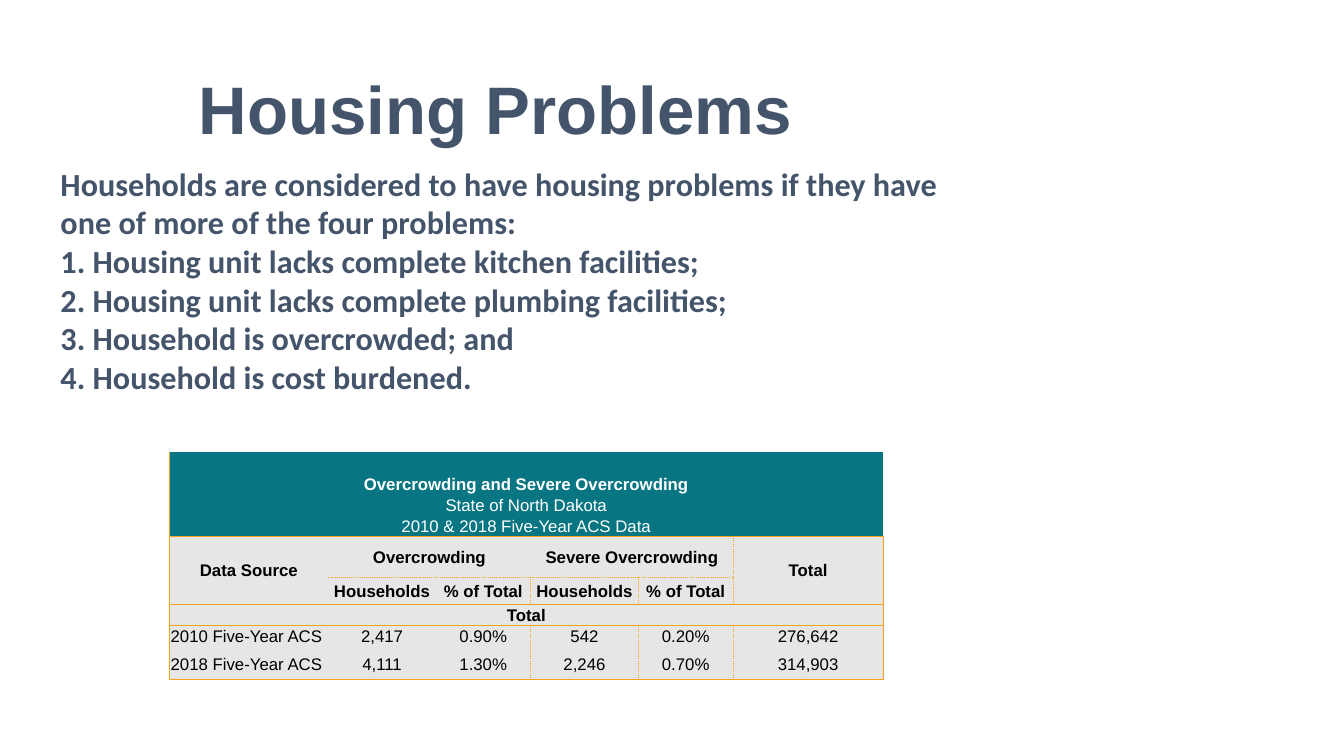
"""Build the Housing Problems slide with its overcrowding table."""
from lxml.etree import SubElement
from pptx import Presentation
from pptx.dml.color import RGBColor as RGB
from pptx.enum.text import MSO_ANCHOR as ANCHOR, MSO_AUTO_SIZE as AUTOSIZE, PP_ALIGN as ALIGN
from pptx.oxml.ns import qn
from pptx.util import Cm, Pt

SLATE, TEAL, GREY, ORANGE = "44546A", "087582", "E7E6E6", "FAA21A"
SOLID, DOTTED = (1, "solid"), (0.5, "sysDot")


def apply_format(part, values):
    for key, value in values.items():
        setattr(part, key, value)


def paint(color_format, color):
    color_format.rgb = RGB.from_string(color)


deck = Presentation()
apply_format(deck, {"slide_width": Cm(33.86), "slide_height": Cm(19.05)})
slide = deck.slides.add_slide(deck.slide_layouts[1])
heading, definition = slide.placeholders

apply_format(heading, {"left": Cm(0.71), "top": Cm(1.5), "width": Cm(23.55), "height": Cm(2.4)})
apply_format(heading.text_frame, {"text": "Housing Problems", "auto_size": AUTOSIZE.NONE,
                                  "vertical_anchor": ANCHOR.MIDDLE})
heading_line = heading.text_frame.paragraphs[0]
heading_line.alignment = ALIGN.CENTER
apply_format(heading_line.font, {"name": "Arial", "size": Pt(48), "bold": True})
paint(heading_line.font.color, SLATE)

problems = [
    "Households are considered to have housing problems if they have one of more of the four problems:",
    "1. Housing unit lacks complete kitchen facilities;",
    "2. Housing unit lacks complete plumbing facilities;",
    "3. Household is overcrowded; and",
    "4. Household is cost burdened.",
]
apply_format(definition, {"left": Cm(1.27), "top": Cm(4.01), "width": Cm(22.76), "height": Cm(6.15)})
apply_format(definition.text_frame, {"text": "\n".join(problems), "auto_size": AUTOSIZE.NONE,
                                     "vertical_anchor": ANCHOR.TOP})
for problem in definition.text_frame.paragraphs:
    properties = problem._p.get_or_add_pPr()
    properties.set("marL", "0")
    properties.set("indent", "0")
    SubElement(properties, qn("a:buNone"))
    apply_format(problem, {"space_before": Pt(0), "alignment": ALIGN.LEFT})
    apply_format(problem.font, {"name": "Calibri", "size": Pt(23), "bold": True})
    paint(problem.font.color, SLATE)

rows = [
    [""],
    ["Overcrowding and Severe Overcrowding"],
    ["State of North Dakota"],
    ["2010 & 2018 Five-Year ACS Data"],
    ["Data Source", "Overcrowding", "", "Severe Overcrowding", "", "Total"],
    ["", "Households", "% of Total", "Households", "% of Total", ""],
    ["Total"],
    ["2010 Five-Year ACS", "2,417", "0.90%", "542", "0.20%", "276,642"],
    ["2018 Five-Year ACS", "4,111", "1.30%", "2,246", "0.70%", "314,903"],
]
row_heights = [0.53, 0.53, 0.53, 0.53, 1.02, 0.69, 0.53, 0.56, 0.81]
column_widths = [4, 2.71, 2.39, 2.71, 2.39, 3.78]
bold_rows = {1, 4, 5, 6}

overcrowding = slide.shapes.add_table(len(rows), len(column_widths), Cm(4.27), Cm(11.4),
                                      Cm(sum(column_widths)), Cm(sum(row_heights))).table
apply_format(overcrowding, {"first_row": False, "horz_banding": False})
overcrowding._tbl.tblPr.find(qn("a:tableStyleId")).text = "{2D5ABB26-0587-4C30-8999-92F81FD0307C}"
for row, height in zip(overcrowding.rows, row_heights):
    row.height = Cm(height)
for column, width in zip(overcrowding.columns, column_widths):
    column.width = Cm(width)

for index, texts in enumerate(rows):
    if len(texts) == 1:
        overcrowding.cell(index, 0).merge(overcrowding.cell(index, 5))
for start, end in [((4, 0), (5, 0)), ((4, 1), (4, 2)), ((4, 3), (4, 4)), ((4, 5), (5, 5))]:
    overcrowding.cell(*start).merge(overcrowding.cell(*end))

row_rules = {(row, col): SOLID for row in (3, 5, 8) for col in range(6)}
row_rules.update({(4, col): DOTTED for col in range(1, 5)})
column_rules = {(row, -1): SOLID for row in range(9)}
column_rules.update({(row, 5): SOLID for row in range(4, 9)})
column_rules.update({(row, col): DOTTED for row in (5, 7, 8) for col in (2, 4)})
column_rules[4, 4] = DOTTED

for row, texts in enumerate(rows):
    for col, text in enumerate(texts):
        cell = overcrowding.cell(row, col)
        if cell.is_spanned:
            continue
        last_row, last_col = row, col
        if cell.is_merge_origin:
            last_row += cell.span_height - 1
            last_col += cell.span_width - 1
        apply_format(cell, {"text": text, "vertical_anchor": ANCHOR.MIDDLE, "margin_left": Cm(0.03),
                            "margin_right": Cm(0.03), "margin_top": Cm(0.03), "margin_bottom": 0})
        edges = {"a:lnL": column_rules.get((row, col - 1)), "a:lnR": column_rules.get((row, last_col)),
                 "a:lnT": row_rules.get((row - 1, col)), "a:lnB": row_rules.get((last_row, col))}
        for tag, rule in edges.items():
            if rule:
                weight, dash = rule
                border = SubElement(cell._tc.get_or_add_tcPr(), qn(tag), w=str(Pt(weight)))
                SubElement(SubElement(border, qn("a:solidFill")), qn("a:srgbClr"), val=ORANGE)
                SubElement(border, qn("a:prstDash"), val=dash)
        cell.fill.solid()
        paint(cell.fill.fore_color, TEAL if row < 4 else GREY)
        label = cell.text_frame.paragraphs[0]
        label.alignment = ALIGN.LEFT if row > 6 and col == 0 else ALIGN.CENTER
        apply_format(label.font, {"name": "Arial", "size": Pt(12), "bold": row in bold_rows})
        paint(label.font.color, "FFFFFF" if row < 4 else "000000")
        if not text:
            SubElement(label._p, qn("a:endParaRPr"), sz="1200")

deck.save("out.pptx")
